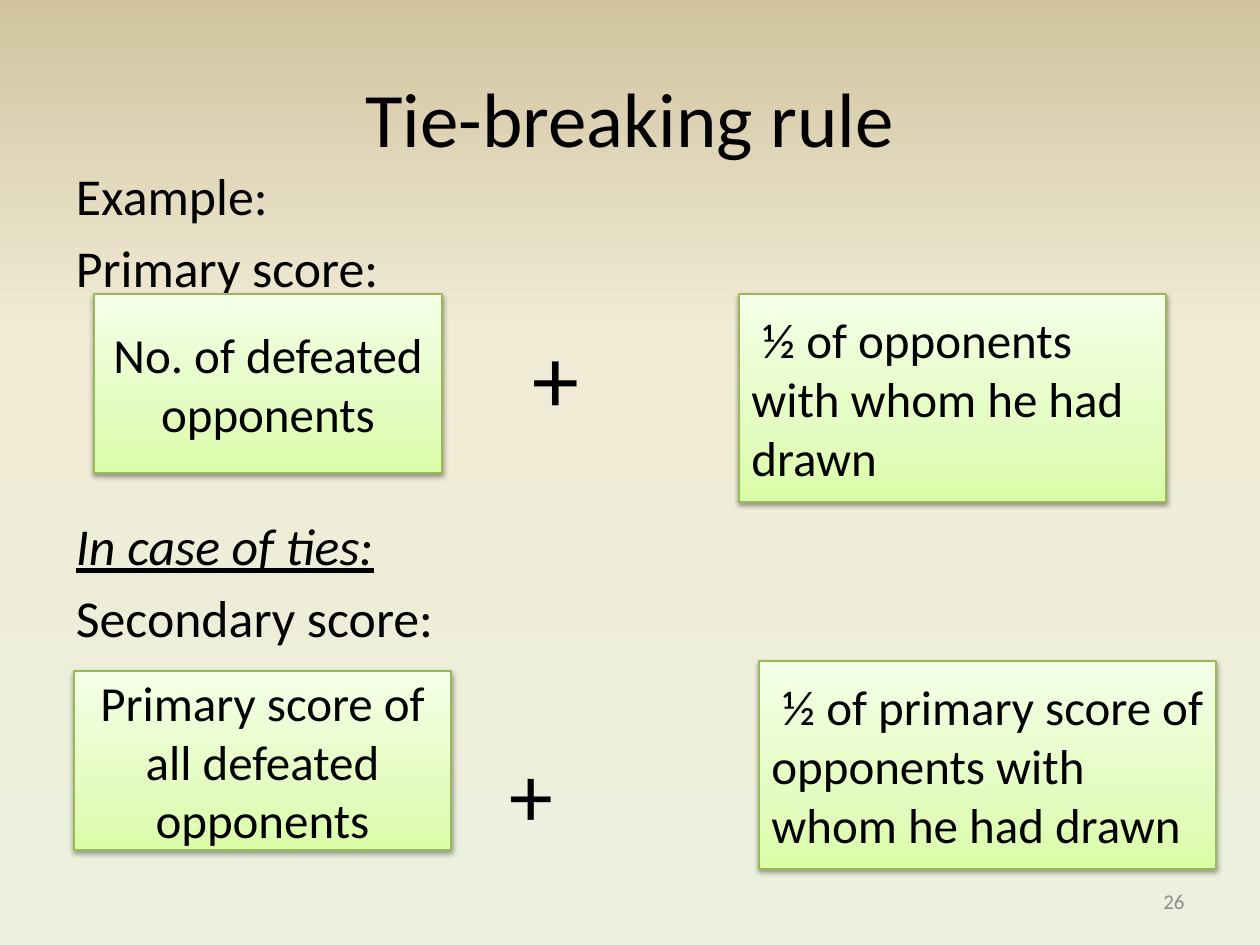
"""Build the tie-breaking rule slide with its two score formulas."""
from dataclasses import dataclass

from lxml import etree
from pptx import Presentation
from pptx import util as u
from pptx.dml.color import RGBColor
from pptx.enum import shapes, text
from pptx.oxml.ns import qn

SCALE = 914400 / 126


@dataclass(frozen=True)
class Theme:
    """Hold the colours and type sizes of the slide."""
    font: str = "Calibri"
    ink: str = "000000"
    muted: str = "8C8C8C"
    edge: str = "98B955"
    background: tuple = ((0, "EBF1DE"), (65, "F0EBD5"), (100, "D1C39F"))
    card: tuple = ((0, "DAFDA7"), (35, "E4FCC2"), (100, "F5FFE7"))
    title: float = 44
    body: float = 29.6
    card_text: float = 28
    number: float = 12


T = Theme()


def px(n):
    """Turn pixels into EMU."""
    return u.Emu(round(n * SCALE))


def add_colour(parent, value):
    """Append an RGB colour element and return it."""
    return etree.SubElement(parent, qn("a:srgbClr"), val=value)


def set_gradient(fill, element, stops):
    """Fill with a gradient that rises from the bottom edge."""
    fill.gradient()
    grad = element.find(".//" + qn("a:gradFill"))
    stop_list = grad.find(qn("a:gsLst"))
    for old in list(stop_list):
        stop_list.remove(old)
    for position, colour in stops:
        add_colour(etree.SubElement(stop_list, qn("a:gs"), pos=str(position * 1000)), colour)
    grad.find(qn("a:lin")).set("ang", "16200000")


def set_shadow(sp):
    """Give a shape a soft shadow below it."""
    sp.shadow.inherit = False
    effects = sp.element.spPr.find(qn("a:effectLst"))
    outer = etree.SubElement(effects, qn("a:outerShdw"), blurRad="40000", dist="20000",
                             dir="5400000", rotWithShape="0")
    etree.SubElement(add_colour(outer, T.ink), qn("a:alpha"), val="38000")


def add_run(p, words, size, colour=T.ink, emphasis=False):
    """Add one styled run to a paragraph."""
    r = p.add_run()
    r.text = words
    r.font.name, r.font.size = T.font, u.Pt(size)
    r.font.color.rgb = RGBColor.from_string(colour)
    if emphasis:
        r.font.italic = r.font.underline = True


def add_text(s, box, words, size, align, colour=T.ink):
    """Add a vertically centred text box of one line."""
    tf = s.shapes.add_textbox(*map(px, box)).text_frame
    tf.word_wrap = True
    tf.vertical_anchor = text.MSO_ANCHOR.MIDDLE
    p = tf.paragraphs[0]
    p.alignment = align
    add_run(p, words, size, colour)


def add_labels(s, top, lines):
    """Add body lines, each given as words and an emphasis flag."""
    tf = s.shapes.add_textbox(px(76), px(top), px(1108), px(136)).text_frame
    tf.word_wrap = True
    tf.margin_left = tf.margin_right = tf.margin_top = tf.margin_bottom = 0
    for i, (words, emphasis) in enumerate(lines):
        p = tf.add_paragraph() if i else tf.paragraphs[0]
        p.space_after = u.Pt(5.5)
        add_run(p, words, T.body, emphasis=emphasis)


def add_card(s, box, words, align):
    """Add a green score card."""
    sp = s.shapes.add_shape(shapes.MSO_SHAPE.RECTANGLE, *map(px, box))
    set_gradient(sp.fill, sp.element, T.card)
    sp.line.color.rgb = RGBColor.from_string(T.edge)
    sp.line.width = u.Pt(0.75)
    set_shadow(sp)
    tf = sp.text_frame
    tf.word_wrap = True
    tf.vertical_anchor = text.MSO_ANCHOR.MIDDLE
    p = tf.paragraphs[0]
    p.alignment = align
    add_run(p, words, T.card_text)


def main():
    """Build and save the slide."""
    prs = Presentation()
    prs.slide_width, prs.slide_height = px(1260), px(945)
    s = prs.slides.add_slide(prs.slide_layouts[6])
    set_gradient(s.background.fill, s.element, T.background)
    left, centre, right = text.PP_ALIGN.LEFT, text.PP_ALIGN.CENTER, text.PP_ALIGN.RIGHT

    add_text(s, (63, 38, 1134, 157), "Tie-breaking rule", T.title, centre)
    add_labels(s, 164, [("Example:", False), ("Primary score:", False)])
    add_labels(s, 514, [("In case of ties:", True), ("Secondary score:", False)])
    for box, size in (((496, 316, 120, 120), 53.6), ((471, 733, 120, 120), 50)):
        add_text(s, box, "+", size, centre)
    add_text(s, (903, 876, 294, 50), "26", T.number, right, T.muted)

    for box, words, align in (
        ((94, 294, 348, 179), "No. of defeated opponents", centre),
        ((739, 294, 427, 208), " ½ of opponents with whom he had drawn", left),
        ((74, 671, 377, 179), "Primary score of all defeated opponents", centre),
        ((759, 661, 457, 208), " ½ of primary score of opponents with whom he had drawn", left),
    ):
        add_card(s, box, words, align)
    prs.save("out.pptx")


if __name__ == "__main__":
    main()
